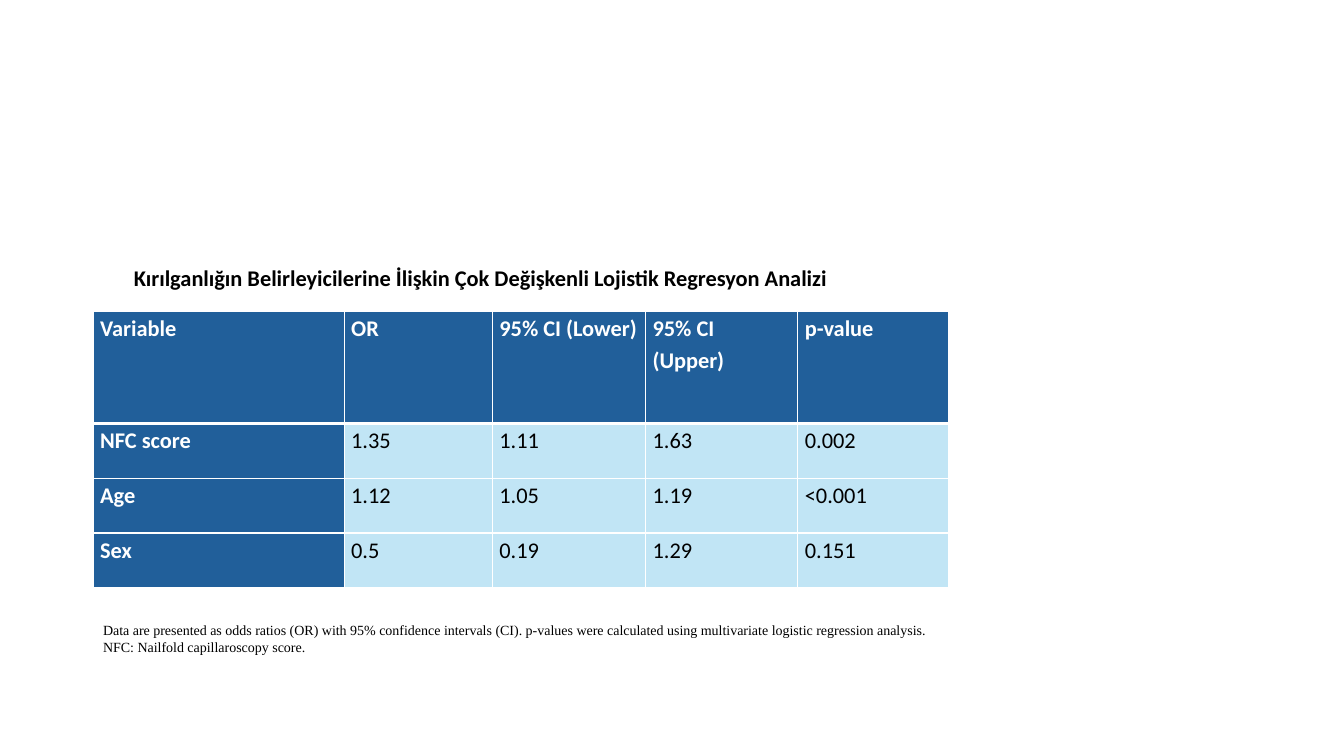
from dataclasses import dataclass

from lxml.etree import fromstring
from pptx import Presentation
from pptx.dml.color import RGBColor as RGB
from pptx.enum.text import MSO_ANCHOR as Anchor, MSO_AUTO_SIZE as AutoSize, PP_ALIGN as Align
from pptx.util import Inches, Pt

COLORS = {"white": "FFFFFF", "black": "000000", "header": "215F9A", "value": "C1E5F5"}
NS = "http://schemas.openxmlformats.org/drawingml/2006/main"
WIDTH, HEIGHT = Inches(13.33), Inches(7.5)


def across(percent: float) -> int:
    return round(WIDTH * percent / 100)


def down(percent: float) -> int:
    return round(HEIGHT * percent / 100)


@dataclass
class TextStyle:
    font: str
    size: int
    color: str = "black"
    bold: bool = False


@dataclass
class Caption:
    text: str
    box: tuple[float, float, float, float]  # left, top, width, height in percent of the slide
    style: TextStyle
    align: Align = Align.LEFT
    anchor: Anchor = Anchor.TOP


# Content
ROWS = [
    ("Variable", "OR", "95% CI (Lower)", "95% CI (Upper)", "p-value"),
    ("NFC score", "1.35", "1.11", "1.63", "0.002"),
    ("Age", "1.12", "1.05", "1.19", "<0.001"),
    ("Sex", "0.5", "0.19", "1.29", "0.151"),
]
TABLE_LEFT, TABLE_TOP = 6.93, 41.2
COL_WIDTHS = [18.68, 11.03, 11.4, 11.33, 11.25]
ROW_HEIGHTS = [14.8] + [7.25] * 3
HEADER = TextStyle("Calibri", 16, "white", True)
VALUE = TextStyle("Calibri", 16)

CAPTIONS = [
    Caption("Kırılganlığın Belirleyicilerine İlişkin Çok Değişkenli Lojistik Regresyon Analizi",
            (9.23, 34.27, 95.27, 4.93), TextStyle("Calibri", 16, bold=True),
            Align.JUSTIFY, Anchor.MIDDLE),
    Caption("Data are presented as odds ratios (OR) with 95% confidence intervals (CI). "
            "p-values were calculated using multivariate logistic regression analysis. "
            "NFC: Nailfold capillaroscopy score.",
            (TABLE_LEFT, 81.6, 64.89, 5.87), TextStyle("Times New Roman", 10)),
]


def write(p, text: str, style: TextStyle) -> None:
    p.text = text
    p.font.name, p.font.size, p.font.bold = style.font, Pt(style.size), style.bold
    p.font.color.rgb = RGB.from_string(COLORS[style.color])


def set_borders(cell, **widths: float) -> None:
    for i, (side, width) in enumerate(widths.items()):
        line = fromstring(
            f'<a:ln{side} xmlns:a="{NS}" w="{Pt(width)}"><a:solidFill>'
            f'<a:srgbClr val="{COLORS["white"]}"/></a:solidFill></a:ln{side}>')
        cell._tc.get_or_add_tcPr().insert(i, line)


def add_results(s) -> None:
    table = s.shapes.add_table(
        len(ROWS), len(COL_WIDTHS), across(TABLE_LEFT), down(TABLE_TOP),
        across(sum(COL_WIDTHS)), down(sum(ROW_HEIGHTS))).table
    for column, width in zip(table.columns, COL_WIDTHS):
        column.width = across(width)
    for row, height in zip(table.rows, ROW_HEIGHTS):
        row.height = down(height)
    for r, texts in enumerate(ROWS):
        for c, text in enumerate(texts):
            cell = table.cell(r, c)
            is_header = r == 0 or c == 0
            cell.margin_left = cell.margin_right = Inches(0.07)
            cell.margin_top = cell.margin_bottom = 0
            cell.fill.solid()
            cell.fill.fore_color.rgb = RGB.from_string(COLORS["header" if is_header else "value"])
            # The rule under the header row is heavier
            set_borders(cell, L=1, R=1, T=3 if r == 1 else 1, B=3 if r == 0 else 1)
            p = cell.text_frame.paragraphs[0]
            p.line_spacing = 1.15
            write(p, text, HEADER if is_header else VALUE)


def add_caption(s, caption: Caption) -> None:
    left, top, width, height = caption.box
    tf = s.shapes.add_textbox(across(left), down(top), across(width), down(height)).text_frame
    tf.word_wrap = True
    tf.auto_size = AutoSize.SHAPE_TO_FIT_TEXT
    tf.vertical_anchor = caption.anchor
    p = tf.paragraphs[0]
    p.alignment = caption.align
    write(p, caption.text, caption.style)


def main() -> None:
    prs = Presentation()
    prs.slide_width, prs.slide_height = WIDTH, HEIGHT
    s = prs.slides.add_slide(prs.slide_layouts[6])

    # Regression table, then its title and footnote
    add_results(s)
    for caption in CAPTIONS:
        add_caption(s, caption)
    prs.save("out.pptx")


if __name__ == "__main__":
    main()
